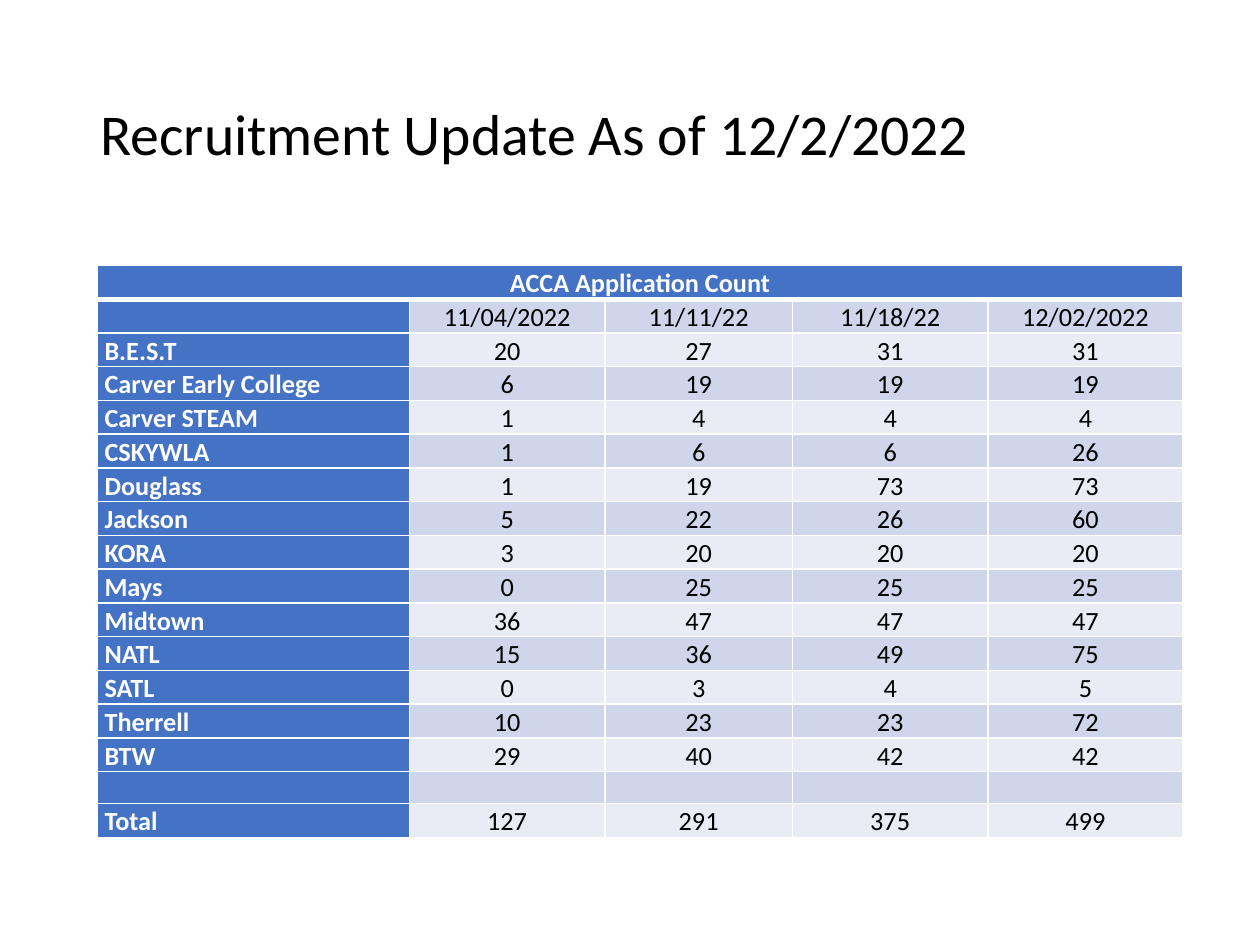
from pptx import Presentation
from pptx.dml.color import RGBColor
from pptx.enum.text import MSO_ANCHOR, PP_ALIGN
from pptx.oxml import parse_xml
from pptx.oxml.ns import nsdecls
from pptx.util import Inches, Pt

BLUE, BAND, PALE, WHITE, BLACK = "4472C4", "CFD5EA", "E9EBF5", "FFFFFF", "000000"
COLUMNS = [2.48, 1.55, 1.49, 1.55, 1.55]
ROWS = [
    ["ACCA Application Count", "", "", "", ""],
    ["", "11/04/2022", "11/11/22", "11/18/22", "12/02/2022"],
    ["B.E.S.T", 20, 27, 31, 31],
    ["Carver Early College", 6, 19, 19, 19],
    ["Carver STEAM", 1, 4, 4, 4],
    ["CSKYWLA", 1, 6, 6, 26],
    ["Douglass", 1, 19, 73, 73],
    ["Jackson", 5, 22, 26, 60],
    ["KORA", 3, 20, 20, 20],
    ["Mays", 0, 25, 25, 25],
    ["Midtown", 36, 47, 47, 47],
    ["NATL", 15, 36, 49, 75],
    ["SATL", 0, 3, 4, 5],
    ["Therrell", 10, 23, 23, 72],
    ["BTW", 29, 40, 42, 42],
    ["", "", "", "", ""],
    ["Total", 127, 291, 375, 499],
]


def rgb(value):
    """Turn a hex string into a colour."""
    return RGBColor.from_string(value)


class Deck:
    """Hold the style and the current slide."""

    font = "Calibri"

    def __init__(self, width, height):
        """Open a blank slide of the given size in inches."""
        self.prs = Presentation()
        self.prs.slide_width, self.prs.slide_height = Inches(width), Inches(height)
        self.s = self.prs.slides.add_slide(self.prs.slide_layouts[6])

    def box(self, x, y, w, h):
        """Turn shares of the slide into lengths."""
        pw, ph = self.prs.slide_width, self.prs.slide_height
        return int(x * pw), int(y * ph), int(w * pw), int(h * ph)

    def paragraph(self, p, text, color, size, spacing, bold=False, align=PP_ALIGN.LEFT):
        """Fill one styled paragraph."""
        p.alignment, p.line_spacing = align, spacing
        if not text:
            p._p.get_or_add_endParaRPr().set("sz", str(size * 100))
            return
        r = p.add_run()
        r.text = text
        for name, value in {"name": self.font, "size": Pt(size), "bold": bold}.items():
            setattr(r.font, name, value)
        r.font.color.rgb = rgb(color)

    def title(self, text, *area):
        """Add the slide title."""
        tf = self.s.shapes.add_textbox(*self.box(*area)).text_frame
        tf.word_wrap, tf.vertical_anchor = True, MSO_ANCHOR.MIDDLE
        self.paragraph(tf.paragraphs[0], text, BLACK, 33, 0.9)

    def borders(self, cell, top, bottom):
        """Draw white cell borders."""
        tcPr = cell._tc.get_or_add_tcPr()
        for side, width in {"L": 1, "R": 1, "T": top, "B": bottom}.items():
            tcPr.append(parse_xml(
                f'<a:ln{side} {nsdecls("a")} w="{Pt(width)}"><a:solidFill>'
                f'<a:srgbClr val="{WHITE}"/></a:solidFill></a:ln{side}>'))

    def cell(self, cell, row, col, text):
        """Style and fill one table cell."""
        header = row == 0 or col == 0
        inset = Inches(0.06 if row == 0 or col < 2 else 0)
        margins = {"margin_left": inset, "margin_right": inset,
                   "margin_top": 0, "margin_bottom": 0}
        for name, value in margins.items():
            setattr(cell, name, value)
        self.borders(cell, 3 if row == 1 else 1, 3 if row == 0 else 1)
        cell.fill.solid()
        cell.fill.fore_color.rgb = rgb(BLUE if header else BAND if row % 2 else PALE)
        align = PP_ALIGN.LEFT if col == 0 and row else PP_ALIGN.CENTER
        self.paragraph(cell.text_frame.paragraphs[0], text, WHITE if header else BLACK,
                       15, 1.07, header, align)

    def table(self, rows, columns, *area):
        """Add a table whose first row spans all columns."""
        shape = self.s.shapes.add_table(len(rows), len(columns), *self.box(*area))
        tbl = shape.table
        tbl.first_row = tbl.horz_banding = False
        for column, width in zip(tbl.columns, columns):
            column.width = Inches(width)
        for i, row in enumerate(rows):
            for j, value in enumerate(row):
                self.cell(tbl.cell(i, j), i, j, str(value))
        tbl.cell(0, 0).merge(tbl.cell(0, len(columns) - 1))


def main():
    """Build and save the slide."""
    deck = Deck(10, 7.5)
    deck.title("Recruitment Update As of 12/2/2022", 0.07, 0.05, 0.86, 0.19)
    deck.table(ROWS, COLUMNS, 0.077, 0.281, 0.862, 0.58)
    deck.prs.save("out.pptx")


if __name__ == "__main__":
    main()
